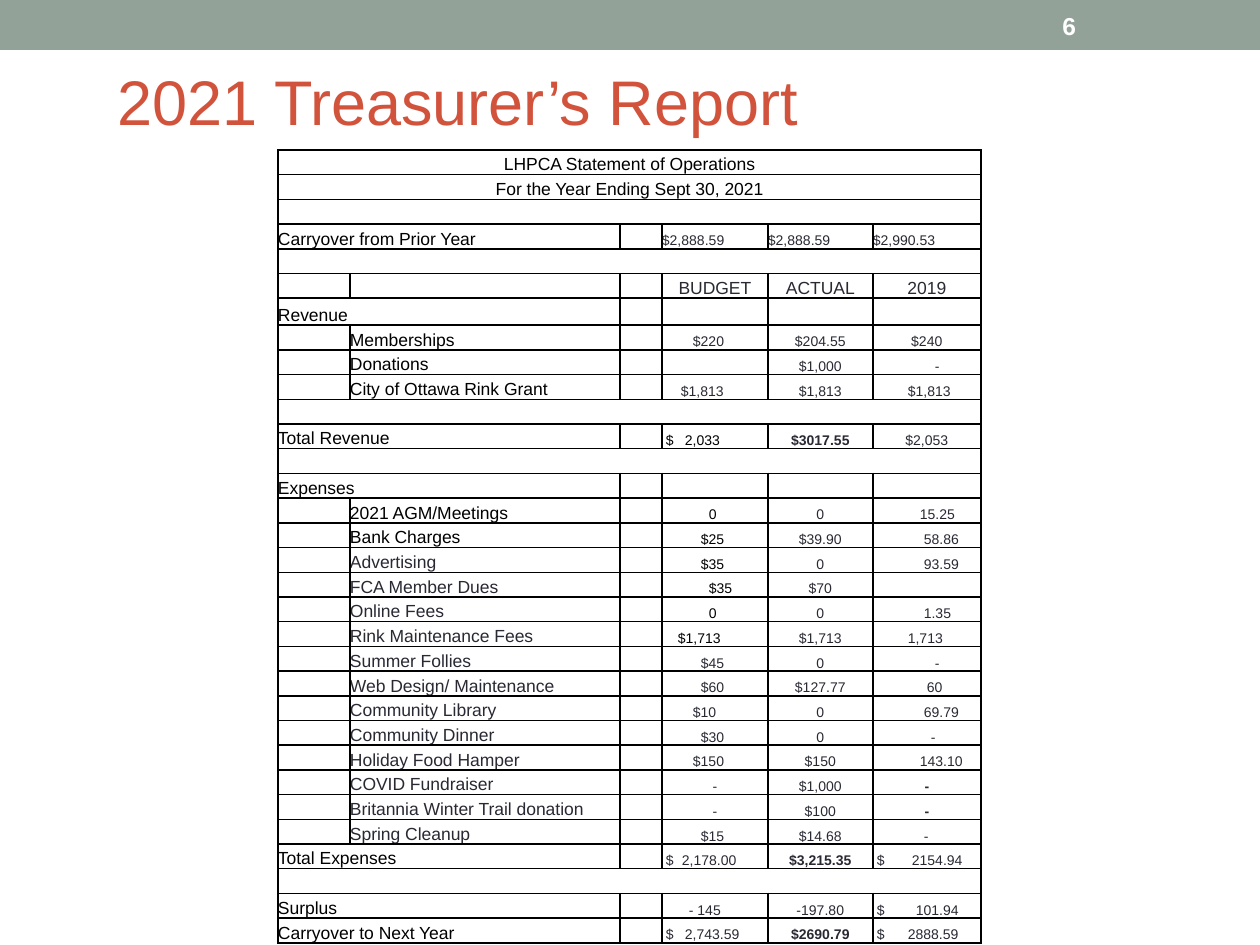
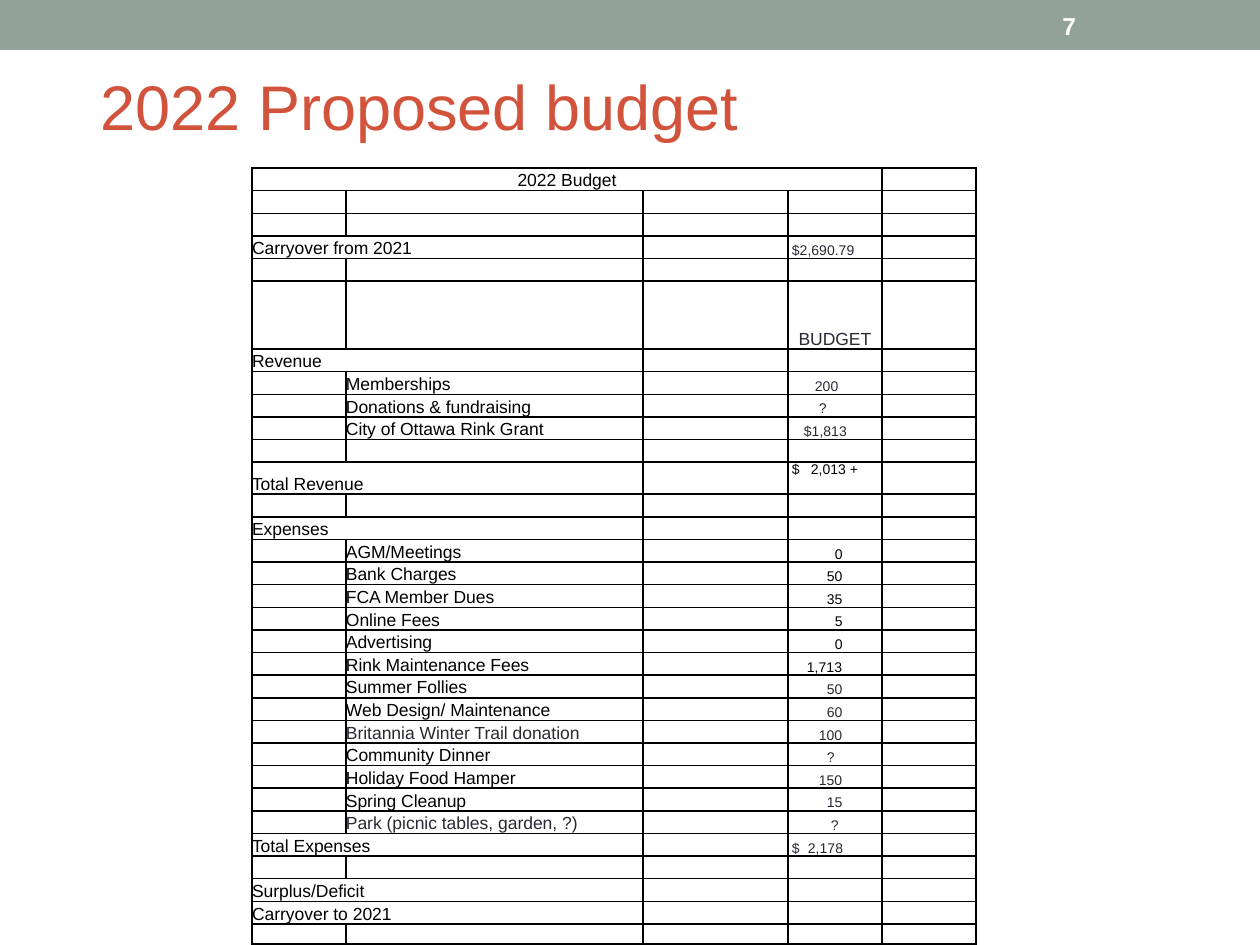
import dataclasses

import lxml.etree
import pptx
import pptx.dml.color
import pptx.enum.shapes
import pptx.enum.text
import pptx.oxml.ns
import pptx.util

PX_PER_INCH = 126
FONT = "Arial"
BLACK = pptx.dml.color.RGBColor(0x00, 0x00, 0x00)
WHITE = pptx.dml.color.RGBColor(0xFF, 0xFF, 0xFF)
INK = pptx.dml.color.RGBColor(0x29, 0x29, 0x34)
SAGE = pptx.dml.color.RGBColor(0x93, 0xA2, 0x99)
RUST = pptx.dml.color.RGBColor(0xD2, 0x53, 0x3C)
TITLE_ONLY = 5
FIRST_FIGURE_COLUMN = 3
TOP = pptx.enum.text.MSO_ANCHOR.TOP
MIDDLE = pptx.enum.text.MSO_ANCHOR.MIDDLE
BOTTOM = pptx.enum.text.MSO_ANCHOR.BOTTOM


@dataclasses.dataclass
class Entry:
    """Text of one table cell; without an indent it is centred."""
    text: str
    indent: int | None = None
    colour: pptx.dml.color.RGBColor = INK
    size: int = 8
    bold: bool = False
    tab: int = 0
    anchor: pptx.enum.text.MSO_ANCHOR = BOTTOM


@dataclasses.dataclass
class Row:
    """One table row: its label, where the label sits, and its figures."""
    kind: str
    label: Entry
    figures: tuple = ()


def banner(text=""):
    """Describe a row whose centred label spans the table."""
    return Row("banner", Entry(text, colour=BLACK, size=10))


def heading(text, *figures):
    """Describe a row whose label spans the first two columns."""
    return Row("heading", Entry(text, 0, BLACK, 10), figures)


def item(text="", *figures, colour=BLACK):
    """Describe a row whose label sits in the second column."""
    return Row("item", Entry(text, 0, colour, 10), figures)


def caption(text):
    """Describe a column caption."""
    return Entry(text, size=10)


def money(amount, tab, colour=INK, anchor=BOTTOM):
    """Describe an amount set apart from its dollar sign by a tab."""
    return Entry("$\t" + amount, 4, colour, tab=tab, anchor=anchor)


def bold(text):
    """Describe a centred bold figure."""
    return Entry(text, bold=True)


REPORT_ROWS = [
    banner("LHPCA Statement of Operations"),
    banner("For the Year Ending Sept 30, 2021"),
    banner(),
    heading("Carryover from Prior Year", Entry("$2,888.59", 0), Entry("$2,888.59", 0), Entry("$2,990.53", 0)),
    banner(),
    item("", caption("BUDGET"), caption("ACTUAL"), caption("2019")),
    heading("Revenue"),
    item("Memberships", Entry("$220", 31), Entry("$204.55"), Entry("$240")),
    item("Donations", Entry(""), Entry("$1,000"), Entry("-", 62)),
    item("City of Ottawa Rink Grant", Entry("$1,813", 19), Entry("$1,813"), Entry("$1,813", 35)),
    banner(),
    heading("Total Revenue", money("2,033", 19, BLACK), bold("$3017.55"), Entry("$2,053")),
    banner(),
    heading("Expenses"),
    item("2021 AGM/Meetings", Entry("0", 47, BLACK), Entry("0"), Entry("15.25", 47)),
    item("Bank Charges", Entry("$25", 39, BLACK), Entry("$39.90"), Entry("58.86", 51)),
    item("Advertising", Entry("$35", 39, BLACK), Entry("0"), Entry("93.59", 51), colour=INK),
    item("FCA Member Dues", Entry("$35", 47, BLACK), Entry("$70"), colour=INK),
    item("Online Fees", Entry("0", 47, BLACK), Entry("0"), Entry("1.35", 51), colour=INK),
    item("Rink Maintenance Fees", Entry("$1,713", 16, BLACK), Entry("$1,713"), Entry("1,713", 35), colour=INK),
    item("Summer Follies", Entry("$45", 39), Entry("0"), Entry("-", 62), colour=INK),
    item("Web Design/ Maintenance", Entry("$60", 39), Entry("$127.77"), Entry("60", 54), colour=INK),
    item("Community Library", Entry("$10", 31), Entry("0"), Entry("69.79", 51), colour=INK),
    item("Community Dinner", Entry("$30", 39), Entry("0"), Entry("-", 58), colour=INK),
    item("Holiday Food Hamper", Entry("$150", 31), Entry("$150"), Entry("143.10", 47), colour=INK),
    item("COVID Fundraiser", Entry("-"), Entry("$1,000"), bold("-"), colour=INK),
    item("Britannia Winter Trail donation", Entry("-"), Entry("$100"), bold("-"), colour=INK),
    item("Spring Cleanup", Entry("$15", 39), Entry("$14.68"), Entry("-", 51), colour=INK),
    heading("Total Expenses", money("2,178.00", 16), bold("$3,215.35"), money("2154.94", 35)),
    banner(),
    heading("Surplus", Entry("- 145", 27), Entry("-197.80"), money("101.94", 39)),
    heading("Carryover to Next Year", money("2,743.59", 19), bold("$2690.79"), money("2888.59", 31)),
]

BUDGET_ROWS = [
    banner("2022 Budget"),
    item(),
    item(),
    heading("Carryover from 2021", Entry("$2,690.79", 4)),
    item(),
    item("", caption("BUDGET")),
    heading("Revenue"),
    item("Memberships", Entry("200", 27)),
    item("Donations & fundraising", Entry("?", 31)),
    item("City of Ottawa Rink Grant", Entry("$1,813", 16)),
    item(),
    heading("Total Revenue", money("2,013 +", 19, BLACK, TOP)),
    item(),
    heading("Expenses"),
    item("AGM/Meetings", Entry("0", 47, BLACK)),
    item("Bank Charges", Entry("50", 39, BLACK)),
    item("FCA Member Dues", Entry("35", 39, BLACK)),
    item("Online Fees", Entry("5", 47, BLACK)),
    item("Advertising", Entry("0", 47, BLACK)),
    item("Rink Maintenance Fees", Entry("1,713", 19, BLACK)),
    item("Summer Follies", Entry("50", 39)),
    item("Web Design/ Maintenance", Entry("60", 39)),
    item("Britannia Winter Trail donation", Entry("100", 31), colour=INK),
    item("Community Dinner", Entry("?", 39)),
    item("Holiday Food Hamper", Entry("150", 31)),
    item("Spring Cleanup", Entry("15", 39)),
    item("Park (picnic tables, garden, ?)", Entry("?", 43), colour=INK),
    heading("Total Expenses", money("2,178", 16)),
    item(),
    heading("Surplus/Deficit"),
    heading("Carryover to 2021"),
    item(),
]


def px(length):
    """Turn pixels into EMU."""
    return pptx.util.Emu(round(length * 914400 / PX_PER_INCH))


def add_span(para, text, size, colour, is_bold=False):
    """Add one formatted run to a paragraph."""
    span = para.add_run()
    span.text = text
    span.font.name = FONT
    span.font.size = pptx.util.Pt(size)
    span.font.bold = is_bold
    span.font.color.rgb = colour


def add_band(page, number):
    """Draw the top band with the page number."""
    band = page.shapes.add_shape(pptx.enum.shapes.MSO_SHAPE.RECTANGLE, 0, 0, px(1260), px(50))
    band.shadow.inherit = False
    band.fill.solid()
    band.fill.fore_color.rgb = SAGE
    band.line.fill.background()
    box = page.shapes.add_textbox(px(1050), px(3), px(147), px(45))
    box.text_frame.word_wrap = True
    box.text_frame.vertical_anchor = MIDDLE
    add_span(box.text_frame.paragraphs[0], str(number), 14, WHITE, True)


def set_title(page, text, left, top, width, height):
    """Place and fill the title placeholder."""
    title = page.shapes.title
    title.left, title.top, title.width, title.height = map(px, (left, top, width, height))
    frame = title.text_frame
    frame.auto_size = pptx.enum.text.MSO_AUTO_SIZE.NONE
    frame.vertical_anchor = MIDDLE
    para = frame.paragraphs[0]
    para.alignment = pptx.enum.text.PP_ALIGN.LEFT
    add_span(para, text, 36, RUST)


def add_child(parent, tag, **attributes):
    """Append a drawing element with its attributes."""
    return lxml.etree.SubElement(parent, pptx.oxml.ns.qn(tag), attributes)


def prepare_cell(cell):
    """Give a cell black borders, no fill, no margins and a small empty line."""
    properties = cell._tc.get_or_add_tcPr()
    for side in ("a:lnL", "a:lnR", "a:lnT", "a:lnB"):
        line = add_child(properties, side, w=str(pptx.util.Pt(1)))
        add_child(add_child(line, "a:solidFill"), "a:srgbClr", val=str(BLACK))
    cell.fill.background()
    cell.margin_left = cell.margin_right = cell.margin_top = cell.margin_bottom = 0
    cell.vertical_anchor = BOTTOM
    cell.text_frame.paragraphs[0]._p.get_or_add_endParaRPr().set("sz", "800")


def fill_cell(cell, entry):
    """Write an entry into a cell."""
    if not entry.text:
        return
    para = cell.text_frame.paragraphs[0]
    cell.vertical_anchor = entry.anchor
    if entry.tab:
        stops = add_child(para._p.get_or_add_pPr(), "a:tabLst")
        add_child(stops, "a:tab", pos=str(px(entry.tab)), algn="l")
    if entry.indent is None:
        para.alignment = pptx.enum.text.PP_ALIGN.CENTER
    else:
        cell.margin_left = px(entry.indent)
    add_span(para, entry.text, entry.size, entry.colour, entry.bold)


def add_ledger(page, rows, left, top, height, widths, special_heights, banner_span):
    """Build a ledger whose ordinary rows share the remaining height equally."""
    frame = page.shapes.add_table(len(rows), len(widths), px(left), px(top), px(sum(widths)), px(height))
    table = frame.table
    table.first_row = table.horz_banding = False
    for column, width in zip(table.columns, widths):
        column.width = px(width)
    ordinary = (height - sum(special_heights.values())) / (len(rows) - len(special_heights))
    for cell in table.iter_cells():
        prepare_cell(cell)
    for index, row in enumerate(rows):
        table.rows[index].height = px(special_heights.get(index, ordinary))
        label_column = 1 if row.kind == "item" else 0
        fill_cell(table.cell(index, label_column), row.label)
        for column, figure in enumerate(row.figures, FIRST_FIGURE_COLUMN):
            fill_cell(table.cell(index, column), figure)
        span = {"banner": banner_span, "heading": 2, "item": 1}[row.kind]
        if span > 1:
            table.cell(index, 0).merge(table.cell(index, span - 1))


def add_page(deck, number, title, title_place):
    """Add a page with the shared band and title style."""
    page = deck.slides.add_slide(deck.slide_layouts[TITLE_ONLY])
    add_band(page, number)
    set_title(page, title, *title_place)
    return page


def main():
    """Build the report and budget pages."""
    deck = pptx.Presentation()
    deck.slide_width, deck.slide_height = px(1260), px(945)
    report = add_page(deck, 6, "2021 Treasurer’s Report", (105, 38, 1074, 125))
    add_ledger(report, REPORT_ROWS, 278, 150, 794, (72, 270, 42, 106, 105, 108), {6: 27}, 6)
    budget = add_page(deck, 7, "2022 Proposed budget", (88, 26, 1102, 158))
    add_ledger(budget, BUDGET_ROWS, 252, 168, 777, (94, 297, 145, 94, 94), {5: 68, 11: 32, 31: 20}, 4)
    deck.save("out.pptx")


if __name__ == "__main__":
    main()
